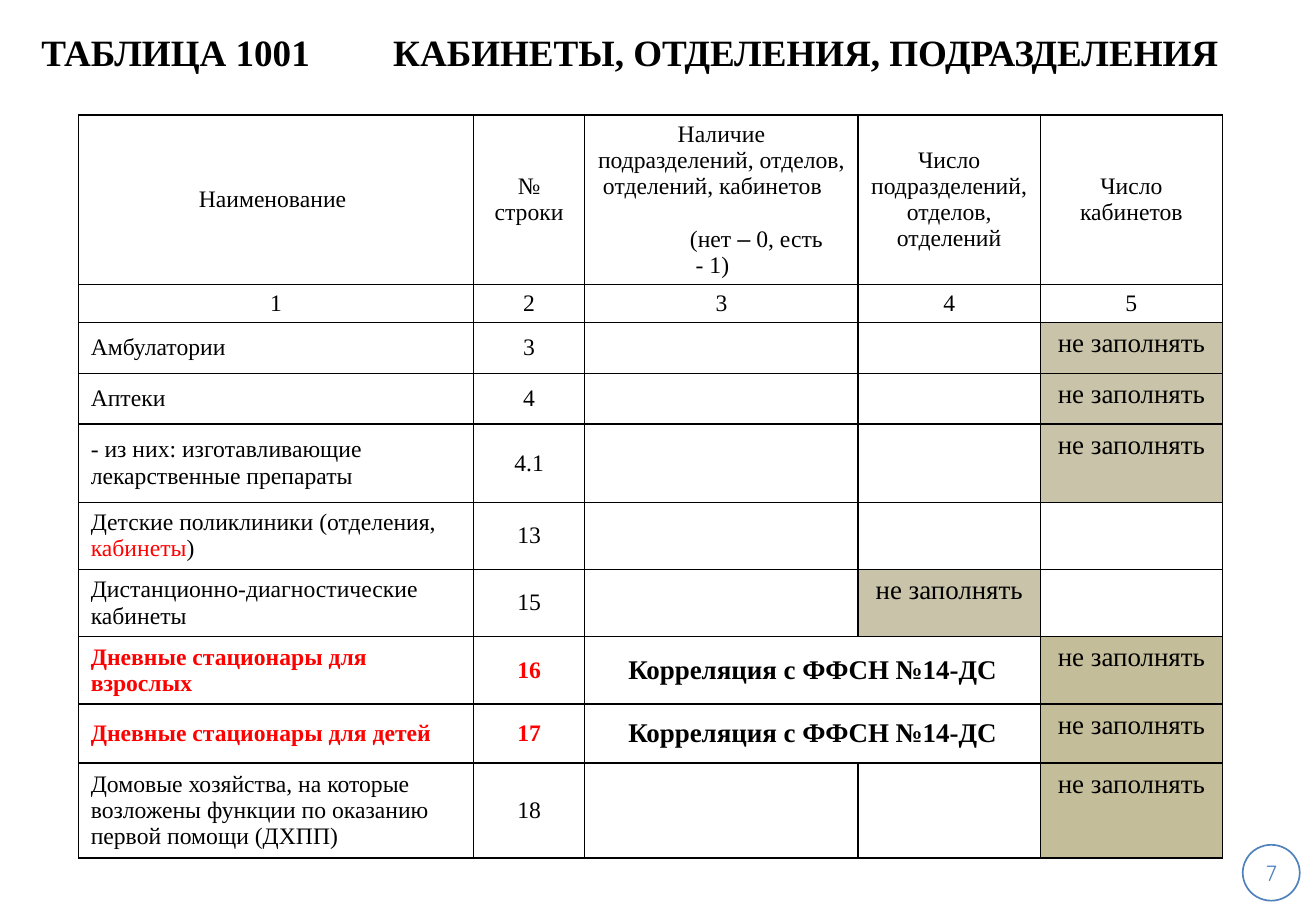
from lxml import etree
from pptx import Presentation
from pptx import util as u
from pptx.dml.color import RGBColor
from pptx.enum import shapes, text
from pptx.oxml import ns

BLACK = RGBColor(0, 0, 0)
RED = RGBColor(0xFF, 0, 0)
BLUE = RGBColor(0x4F, 0x81, 0xBD)
OLIVE = RGBColor(0x94, 0x8A, 0x54)
KHAKI = RGBColor(0xC4, 0xBD, 0x99)

LEFT, CENTER = text.PP_ALIGN.LEFT, text.PP_ALIGN.CENTER
TOP, MIDDLE = text.MSO_ANCHOR.TOP, text.MSO_ANCHOR.MIDDLE

COLUMNS = [234, 66, 162, 108, 108]
ROWS = [100.4, 22.5, 30.2, 30, 46.5, 39.7, 40, 40, 35, 56.3]
HEADERS = ["Наименование", "№ строки", None,
           "Число подразделений, отделов, отделений", "Число кабинетов"]
SKIP = "не заполнять"
LINKED = "Корреляция с ФФСН №14-ДС"
# name, row number, red bold row, column not to be filled in, its colour, its opacity in %
DEPARTMENTS = [
    (["Амбулатории"], "3", False, 4, OLIVE, 50),
    (["Аптеки"], "4", False, 4, OLIVE, 50),
    (["- из них: изготавливающие лекарственные препараты"], "4.1", False, 4, OLIVE, 50),
    (["Детские поликлиники (отделения, ", ("кабинеты", {"color": RED}), ")"],
     "13", False, None, None, None),
    (["Дистанционно-диагностические кабинеты"], "15", False, 3, OLIVE, 50),
    (["Дневные стационары для взрослых"], "16", True, 4, KHAKI, 100),
    (["Дневные стационары для детей"], "17", True, 4, KHAKI, 100),
    (["Домовые хозяйства, на которые возложены функции по оказанию первой помощи (ДХПП)"],
     "18", False, 4, KHAKI, 100),
]


def sub(parent, tag, **attrs):
    return etree.SubElement(parent, ns.qn(tag), attrs)


class Deck:
    font = "Times New Roman"

    def __init__(self, width, height):
        self.prs = Presentation()
        self.prs.slide_width, self.prs.slide_height = u.Pt(width), u.Pt(height)
        self.s = self.prs.slides.add_slide(self.prs.slide_layouts[6])

    def runs(self, p, parts, align=LEFT, size=14, color=BLACK, bold=False, font=None):
        """Add runs; a part is a string or a (string, style changes) pair."""
        p.alignment = align
        for part in parts:
            words, own = (part, {}) if isinstance(part, str) else part
            r = p.add_run()
            r.text = words
            r.font.name = own.get("font", font or self.font)
            r.font.size = u.Pt(size)
            r.font.bold = bold
            r.font.color.rgb = own.get("color", color)

    def frame(self, tf, margins, wrap=True):
        tf.word_wrap = wrap
        tf.vertical_anchor = MIDDLE
        tf.margin_left, tf.margin_top, tf.margin_right, tf.margin_bottom = map(u.Pt, margins)
        return tf.paragraphs[0]

    def title(self, box, label, heading, tab):
        sp = self.s.shapes.add_textbox(*map(u.Pt, box))
        p = self.frame(sp.text_frame, (0, 3.6, 6.5, 3.6))
        tabs = sub(p._p.get_or_add_pPr(), "a:tabLst")
        sub(tabs, "a:tab", pos=str(u.Pt(tab)), algn="l")
        self.runs(p, [f"{label}\t{heading}"], size=22, bold=True)

    def page_number(self, box, number):
        sp = self.s.shapes.add_shape(shapes.MSO_SHAPE.OVAL, *map(u.Pt, box))
        sp.shadow.inherit = False
        sp.fill.background()
        sp.line.color.rgb = BLUE
        sp.line.width = u.Pt(1)
        p = self.frame(sp.text_frame, (0, 0, 0, 0), wrap=False)
        self.runs(p, [number], CENTER, 13, BLUE, font="Quicksand")

    def table(self, left, top, columns, rows):
        gf = self.s.shapes.add_table(len(rows), len(columns), u.Pt(left), u.Pt(top),
                                     u.Pt(sum(columns)), u.Pt(sum(rows)))
        table = gf.table
        table.first_row = table.horz_banding = False
        for column, width in zip(table.columns, columns):
            column.width = u.Pt(width)
        for row, height in zip(table.rows, rows):
            row.height = u.Pt(height)
            for cell in row.cells:
                self.borders(cell)
                cell.fill.background()
        return table

    def borders(self, cell):
        tc_pr = cell._tc.get_or_add_tcPr()
        for side in "LRTB":
            ln = sub(tc_pr, f"a:ln{side}", w=str(u.Pt(1)))
            sub(sub(ln, "a:solidFill"), "a:srgbClr", val=str(BLACK))

    def cell(self, cell, parts, align=CENTER, anchor=MIDDLE, **style):
        cell.vertical_anchor = anchor
        cell.margin_top = u.Pt(3.6 if anchor == TOP else 0)
        cell.margin_bottom = u.Pt(0)
        self.runs(cell.text_frame.paragraphs[0], parts, align, **style)

    def shade(self, cell, color, opacity):
        cell.fill.solid()
        cell.fill.fore_color.rgb = color
        if opacity < 100:
            clr = cell._tc.tcPr.find(ns.qn("a:solidFill"))[0]
            sub(clr, "a:alpha", val=str(opacity * 1000))

    def availability_header(self, cell):
        self.cell(cell, ["Наличие подразделений, отделов,"])
        units = cell.text_frame.add_paragraph()
        units._p.get_or_add_pPr().set("marR", str(u.Pt(10.6)))
        self.runs(units, ["отделений, кабинетов"], CENTER)
        codes = cell.text_frame.add_paragraph()
        codes.space_before = u.Pt(15.5)
        codes._p.get_or_add_pPr().set("indent", str(u.Pt(52)))
        self.runs(codes, ["(нет ", ("–", {"font": "Arial"}), " 0, есть - 1)"], CENTER)


def main():
    deck = Deck(780, 540)
    deck.page_number((736.6, 500.8, 33.8, 33.1), "7")
    deck.title((24.5, 0, 740, 61), "ТАБЛИЦА 1001", "КАБИНЕТЫ, ОТДЕЛЕНИЯ, ПОДРАЗДЕЛЕНИЯ", 208.6)

    table = deck.table(46.6, 68.2, COLUMNS, ROWS)
    for c, header in enumerate(HEADERS):
        if header:
            deck.cell(table.cell(0, c), [header])
        else:
            deck.availability_header(table.cell(0, c))
        deck.cell(table.cell(1, c), [str(c + 1)])
    table.cell(0, 0).margin_right = u.Pt(11.3)

    for r, (name, number, linked, skipped, color, opacity) in enumerate(DEPARTMENTS, 2):
        style = {"color": RED if linked else BLACK, "bold": linked}
        deck.cell(table.cell(r, 0), name, LEFT, **style)
        deck.cell(table.cell(r, 1), [number], **style)
        if linked:
            table.cell(r, 2).merge(table.cell(r, 3))
            deck.cell(table.cell(r, 2), [LINKED], size=16, bold=True)
        if skipped is not None:
            deck.cell(table.cell(r, skipped), [SKIP], anchor=TOP, size=16)
            deck.shade(table.cell(r, skipped), color, opacity)

    deck.prs.save("out.pptx")


if __name__ == "__main__":
    main()
